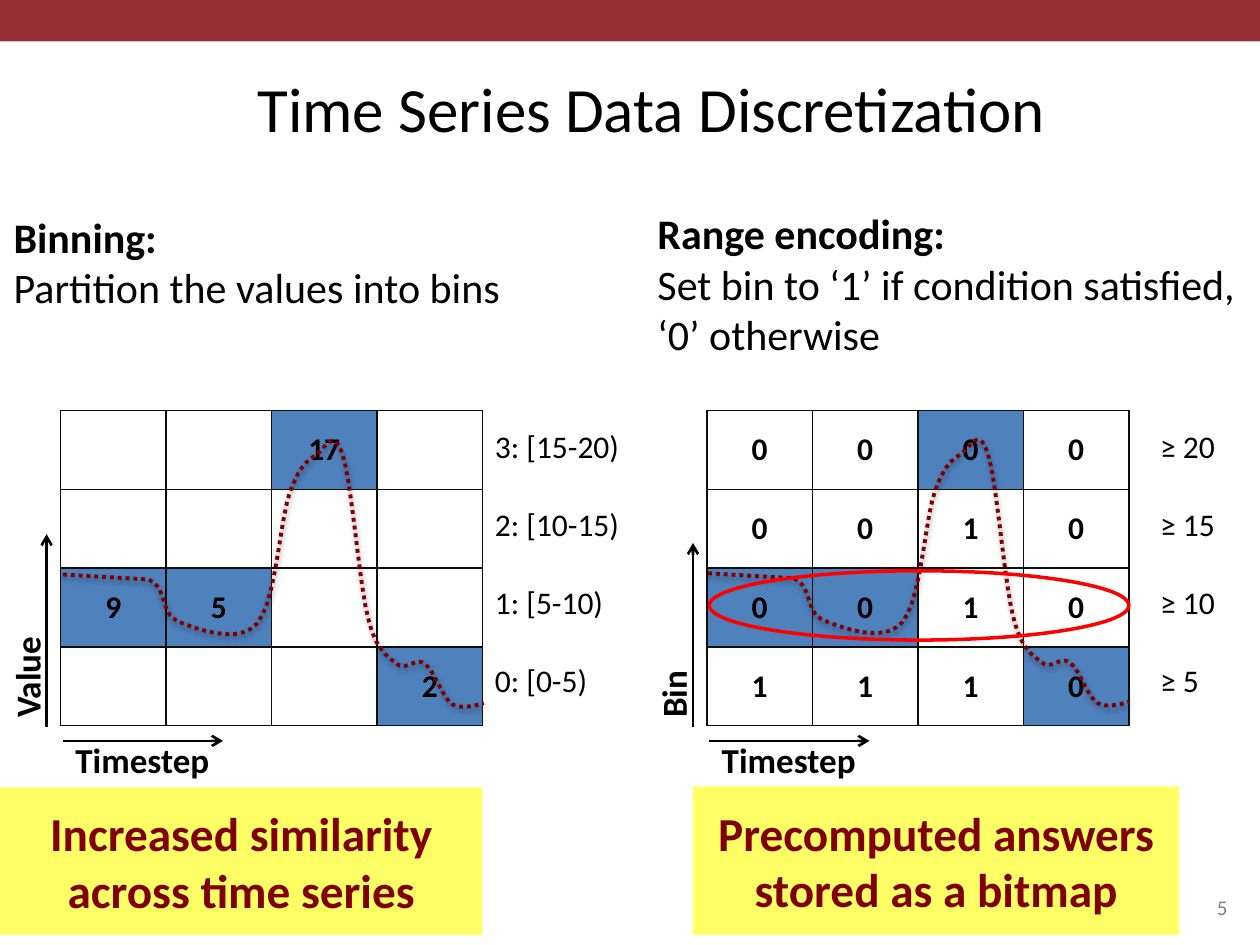
import pptx
import pptx.util
import pptx.dml.color
import pptx.enum.dml
import pptx.enum.shapes
import pptx.enum.text
import pptx.oxml
import pptx.oxml.ns

Inches = pptx.util.Inches
Align = pptx.enum.text.PP_ALIGN
Anchor = pptx.enum.text.MSO_ANCHOR
Shape = pptx.enum.shapes.MSO_SHAPE
ROW = 0.625
COL = 0.8375
TOP = 3.26
START = (5.62, 4.55)
BEND = (6.3, 4.59)
CURVES = [
    ((6.45, 4.65), (6.39, 4.86), (6.53, 4.92)),
    ((6.67, 4.98), (7.01, 5.11), (7.16, 4.94)),
    ((7.31, 4.77), (7.34, 4.13), (7.42, 3.9)),
    ((7.5, 3.68), (7.56, 3.65), (7.63, 3.6)),
    ((7.7, 3.55), (7.77, 3.38), (7.84, 3.6)),
    ((7.91, 3.81), (7.97, 4.61), (8.04, 4.89)),
    ((8.11, 5.17), (8.2, 5.2), (8.27, 5.26)),
    ((8.35, 5.32), (8.42, 5.2), (8.49, 5.26)),
    ((8.57, 5.31), (8.63, 5.53), (8.71, 5.58)),
    ((8.79, 5.63), (8.96, 5.57), (8.96, 5.57)),
]


def color(code):
    return pptx.dml.color.RGBColor.from_string(code)


def make(tag, **attrs):
    node = pptx.oxml.parse_xml(f"<a:{tag} {pptx.oxml.ns.nsdecls('a')}/>")
    for key, value in attrs.items():
        node.set(key, str(value))
    return node


def nest(parent, tag, **attrs):
    node = make(tag, **attrs)
    parent.append(node)
    return node


def style(par, size, code="000000", bold=False, align=Align.LEFT):
    par.alignment = align
    par.font.name = "Calibri"
    par.font.size = pptx.util.Pt(size)
    par.font.bold = bold
    par.font.color.rgb = color(code)


def add_text(slide, box, lines, size, code="000000", bold=False,
             align=Align.LEFT, anchor=Anchor.TOP, wrap=True, turn=0):
    shape = slide.shapes.add_textbox(*map(Inches, box))
    shape.rotation = turn
    frame = shape.text_frame
    frame.word_wrap = wrap
    frame.vertical_anchor = anchor
    frame.text = "\n".join(lines)
    for par in frame.paragraphs:
        style(par, size, code, bold, align)
    return frame


def add_block(slide, box, fill=None, line=None, kind=Shape.RECTANGLE):
    shape = slide.shapes.add_shape(kind, *map(Inches, box))
    shape.shadow.inherit = False
    if fill:
        shape.fill.solid()
        shape.fill.fore_color.rgb = color(fill)
    else:
        shape.fill.background()
    if line:
        shape.line.color.rgb = color(line)
        shape.line.width = pptx.util.Pt(2)
    else:
        shape.line.fill.background()
    return shape


def add_note(slide, box, text):
    frame = add_block(slide, box, "FFFF66").text_frame
    frame.word_wrap = True
    frame.vertical_anchor = Anchor.MIDDLE
    frame.text = text
    style(frame.paragraphs[0], 27, "800000", True, Align.CENTER)


def add_intro(slide, box, head, body, wrap):
    frame = add_text(slide, box, [head, body], 24, wrap=wrap)
    frame.paragraphs[0].font.bold = True


def add_arrow(slide, start, end):
    line = slide.shapes.add_connector(
        pptx.enum.shapes.MSO_CONNECTOR.STRAIGHT, *map(Inches, start + end))
    line.line.color.rgb = color("000000")
    line.line.width = pptx.util.Pt(1.5)
    nest(line.line._get_or_add_ln(), "tailEnd", type="arrow")
    nest(line._element.spPr, "effectLst")


def add_edges(cell):
    props = cell._tc.get_or_add_tcPr()
    for side in ("lnL", "lnR", "lnT", "lnB"):
        edge = nest(props, side, w=pptx.util.Pt(1))
        nest(nest(edge, "solidFill"), "srgbClr", val="0D0D0D")


def add_grid(slide, left, rows, marks):
    frame = slide.shapes.add_table(
        4, 4, Inches(left), Inches(TOP), Inches(4 * COL), Inches(4 * ROW))
    table = frame.table
    table.first_row = False
    table.horz_banding = False
    for row, words in enumerate(rows):
        table.rows[row].height = Inches(ROW)
        for col, word in enumerate(words):
            table.columns[col].width = Inches(COL)
            cell = table.cell(row, col)
            cell.text = word
            cell.vertical_anchor = Anchor.MIDDLE
            style(cell.text_frame.paragraphs[0], 18, bold=True, align=Align.CENTER)
            add_edges(cell)
            if (row, col) in marks:
                cell.fill.solid()
                cell.fill.fore_color.rgb = color("4F81BD")
            else:
                cell.fill.background()


def trace(steps=10):
    points = [START, BEND]
    for curve in CURVES:
        a, b, c, d = (points[-1],) + curve
        for step in range(1, steps + 1):
            t = step / steps
            u = 1 - t
            points.append(tuple(
                u**3 * a[i] + 3 * u * u * t * b[i] + 3 * u * t * t * c[i] + t**3 * d[i]
                for i in (0, 1)))
    return points


def add_wave(slide, dx, dy):
    points = [(Inches(x + dx), Inches(y + dy)) for x, y in trace()]
    build = slide.shapes.build_freeform(*points[0])
    build.add_line_segments(points[1:], close=False)
    wave = build.convert_to_shape()
    wave.fill.background()
    wave.line.color.rgb = color("800000")
    wave.line.width = pptx.util.Pt(2.25)
    wave.line.dash_style = pptx.enum.dml.MSO_LINE.ROUND_DOT
    wave.shadow.inherit = False
    glow = nest(wave._element.spPr.find(pptx.oxml.ns.qn("a:effectLst")), "outerShdw",
                blurRad=pptx.util.Pt(3.1), dist=pptx.util.Pt(1.6),
                dir=90 * 60000, rotWithShape=0)
    nest(nest(glow, "srgbClr", val="000000"), "alpha", val=38000)


def add_chart(slide, left, rows, marks, axis, peak, tags, gap, shift):
    add_grid(slide, left, rows, marks)
    add_arrow(slide, (left + 0.02, 5.88), (left + 1.29, 5.88))
    add_text(slide, (left + 0.02, 5.81, 1.53, 0.44), ["Timestep"], 20, bold=True)
    add_text(slide, (left - 1.33, 4.51, 2.13, 0.44), [axis], 20, bold=True, turn=270)
    add_arrow(slide, (left - 0.11, 5.77), (left - 0.11, peak))
    add_wave(slide, *shift)
    for row, tag in enumerate(tags):
        add_text(slide, (left + gap, 3.34 + row * 0.62, 1.2, 0.4), [tag], 18, wrap=False)


def main():
    deck = pptx.Presentation()
    deck.slide_width = Inches(10)
    deck.slide_height = Inches(7.5)
    slide = deck.slides.add_slide(deck.slide_layouts[6])
    add_block(slide, (0, 0, 10, 0.33), "963237")
    add_text(slide, (7.17, 6.83, 2.67, 0.52), ["5"], 12, "808080",
             align=Align.RIGHT, anchor=Anchor.BOTTOM)
    add_text(slide, (0.67, 0.33, 9, 0.87), ["Time Series Data Discretization"], 36,
             align=Align.CENTER, anchor=Anchor.BOTTOM)
    add_intro(slide, (0.01, 1.63, 4.12, 0.91), "Binning:",
              "Partition the values into bins", False)
    add_intro(slide, (5.12, 1.6, 4.8, 1.31), "Range encoding:",
              "Set bin to ‘1’ if condition satisfied, ‘0’ otherwise", True)
    marks = {(0, 2), (2, 0), (2, 1), (3, 3)}
    add_chart(slide, 5.61, ["0000", "0010", "0010", "1110"], marks, "Bin", 4.31,
              ["≥ 20", "≥ 15", "≥ 10", "≥ 5"], 3.5, (0, 0))
    bins = [["", "", "17", ""], [""] * 4, ["9", "5", "", ""], ["", "", "", "2"]]
    add_chart(slide, 0.48, bins, marks, "Value", 4.24,
              ["3: [15-20)", "2: [10-15)", "1: [5-10)", "0: [0-5)"], 3.35, (-5.12, 0.01))
    add_block(slide, (5.63, 4.53, 3.33, 0.55), line="FF0000", kind=Shape.OVAL)
    add_note(slide, (5.5, 6.24, 3.86, 1.18), "Precomputed answers stored as a bitmap")
    add_note(slide, (0, 6.25, 3.83, 1.17), "Increased similarity across time series")
    deck.save("out.pptx")


if __name__ == "__main__":
    main()
